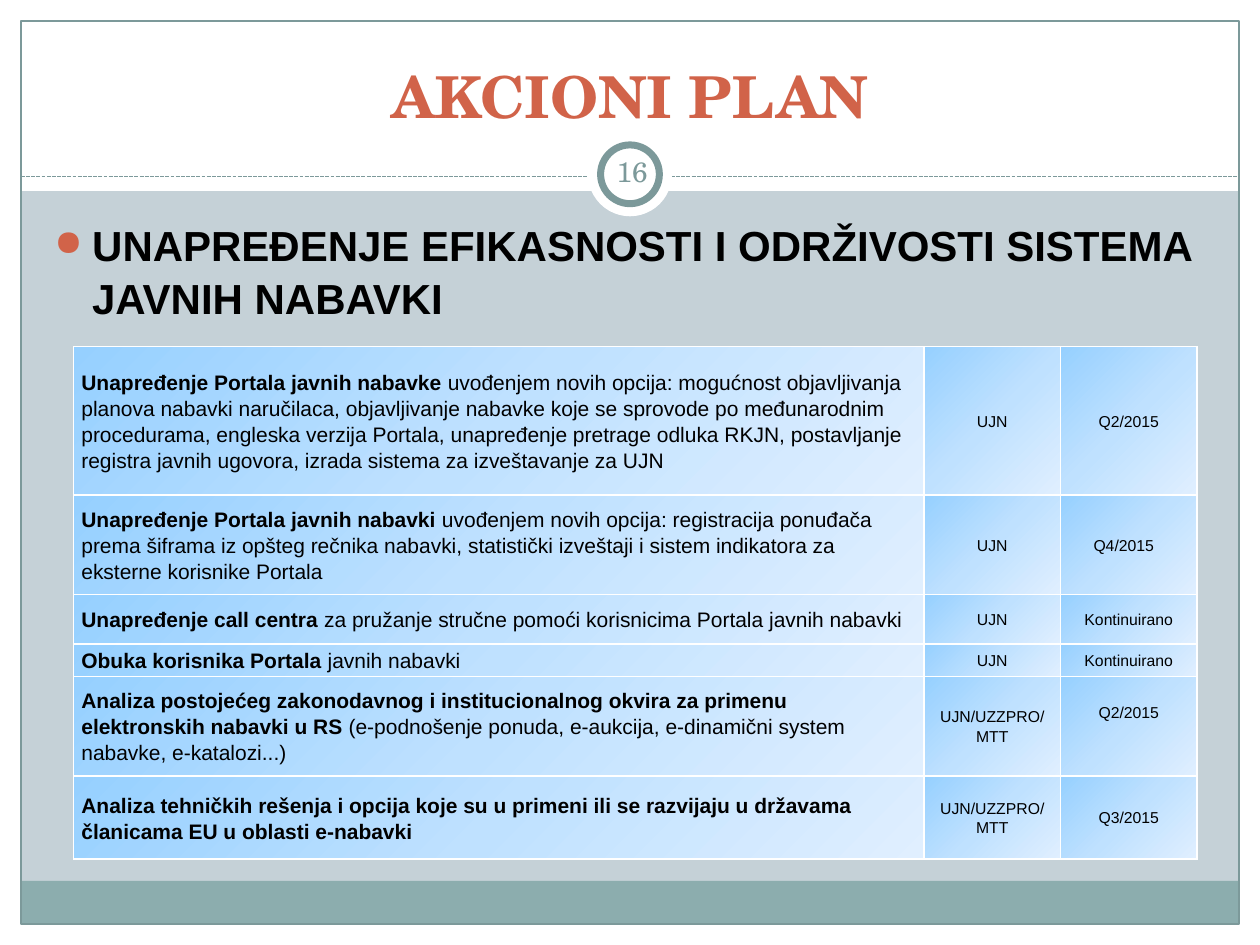
"""Build the action plan slide with its table of public procurement measures."""
import dataclasses
import typing

import pptx
import pptx.dml.color
import pptx.enum.dml
import pptx.enum.shapes
import pptx.enum.text
import pptx.oxml
import pptx.oxml.ns
import pptx.util

COLS, ROWS = 120, 90
WIDTH, HEIGHT = pptx.util.Inches(10), pptx.util.Inches(7.5)
SERIF, SANS = "TeX Gyre Schola", "Arial"
COLORS = {
    "background": "C5D1D7", "white": "FFFFFF", "band": "8CADAE", "frame": "7C999A",
    "accent": "D16349", "text": "000000",
    "cell_start": "96D0FF", "cell_middle": "BFE1FF", "cell_end": "E0EFFF",
}
SHAPE = pptx.enum.shapes.MSO_SHAPE
ANCHOR = pptx.enum.text.MSO_ANCHOR
ALIGN = pptx.enum.text.PP_ALIGN
NS = pptx.oxml.ns.nsdecls("a")


@dataclasses.dataclass(frozen=True)
class Panel:
    col: float
    row: float
    cols: float
    rows: float
    fill: str | None = None
    line: str | None = None
    weight: float = 0.75
    kind: typing.Any = SHAPE.RECTANGLE


@dataclasses.dataclass(frozen=True)
class Run:
    text: str
    size: float
    font: str = SANS
    color: str = "text"
    bold: bool = False


@dataclasses.dataclass(frozen=True)
class Measure:
    rows: float
    lead: str
    detail: str
    owner: str
    due: str
    due_right: float = 0.75
    due_bottom: float = 0


PANELS = [
    Panel(0, 88, COLS, 2, "white"),
    Panel(0, 0, COLS, 18.2, "white"),
    Panel(0, 0, 2, ROWS, "white"),
    Panel(118, 0, 2, ROWS, "white"),
    Panel(2, 83.9, 116, 4.1, "band"),
    Panel(2, 2, 116, 86, line="frame"),
]
BADGE = [
    Panel(56, 12.6, 8, 8, "white", kind=SHAPE.OVAL),
    Panel(57.2, 13.8, 5.6, 5.6, "white", "frame", 4, SHAPE.OVAL),
]
TABLE_COLS = (81, 13, 13)
MEASURES = [
    Measure(14.16, "Unapređenje Portala javnih nabavke ",
            "uvođenjem novih opcija: mogućnost objavljivanja planova nabavki naručilaca, "
            "objavljivanje nabavke koje se sprovode po međunarodnim procedurama, engleska "
            "verzija Portala, unapređenje pretrage odluka RKJN, postavljanje registra javnih "
            "ugovora, izrada sistema za izveštavanje za UJN", "UJN", "Q2/2015"),
    Measure(9.48, "Unapređenje Portala javnih nabavki ",
            "uvođenjem novih opcija: registracija ponuđača prema šiframa iz opšteg rečnika "
            "nabavki, statistički izveštaji i sistem indikatora za eksterne korisnike Portala",
            "UJN", "Q4/2015", due_right=1.7),
    Measure(4.68, "Unapređenje call centra ",
            "za pružanje stručne pomoći korisnicima Portala javnih nabavki",
            "UJN", "Kontinuirano"),
    Measure(3.12, "Obuka korisnika Portala ", "javnih nabavki", "UJN", "Kontinuirano"),
    Measure(9.48, "Analiza postojećeg zakonodavnog i institucionalnog okvira za primenu "
            "elektronskih nabavki u RS ",
            "(e-podnošenje ponuda, e-aukcija, e-dinamični system nabavke, e-katalozi...)",
            "UJN/UZZPRO/MTT", "Q2/2015", due_bottom=2.6),
    Measure(7.92, "Analiza tehničkih rešenja i opcija koje su u primeni ili se razvijaju u "
            "državama članicama EU u oblasti e-nabavki", "", "UJN/UZZPRO/MTT", "Q3/2015"),
]


def x(cols: float) -> int:
    return round(WIDTH * cols / COLS)


def y(rows: float) -> int:
    return round(HEIGHT * rows / ROWS)


def rgb(name: str) -> pptx.dml.color.RGBColor:
    return pptx.dml.color.RGBColor.from_string(COLORS[name])


def draw_panel(s: typing.Any, panel: Panel) -> None:
    sp = s.shapes.add_shape(panel.kind, x(panel.col), y(panel.row), x(panel.cols), y(panel.rows))
    sp.shadow.inherit = False
    if panel.fill:
        sp.fill.solid()
        sp.fill.fore_color.rgb = rgb(panel.fill)
    else:
        sp.fill.background()
    if panel.line:
        sp.line.color.rgb = rgb(panel.line)
        sp.line.width = pptx.util.Pt(panel.weight)
    else:
        sp.line.fill.background()


def draw_divider(s: typing.Any) -> None:
    sp = s.shapes.add_connector(
        pptx.enum.shapes.MSO_CONNECTOR.STRAIGHT, x(2), y(16.8), x(118), y(16.8))
    sp.line.color.rgb = rgb("frame")
    sp.line.width = pptx.util.Pt(0.75)
    sp.line.dash_style = pptx.enum.dml.MSO_LINE.SQUARE_DOT
    sp._element.spPr.append(pptx.oxml.parse_xml(f"<a:effectLst {NS}/>"))


def add_runs(p: typing.Any, runs: typing.Iterable[Run]) -> None:
    for run in runs:
        r = p.add_run()
        r.text = run.text
        r.font.size = pptx.util.Pt(run.size)
        r.font.name = run.font
        r.font.bold = run.bold
        r.font.color.rgb = rgb(run.color)


def draw_text(s: typing.Any, area: Panel, run: Run, align: typing.Any, anchor: typing.Any,
              inset: float = 0.6) -> typing.Any:
    tf = s.shapes.add_textbox(x(area.col), y(area.row), x(area.cols), y(area.rows)).text_frame
    tf.word_wrap = True
    tf.vertical_anchor = anchor
    tf.margin_left = tf.margin_right = x(inset)
    tf.margin_top = tf.margin_bottom = y(0.6)
    p = tf.paragraphs[0]
    p.alignment = align
    add_runs(p, [run])
    return p


def add_bullet(p: typing.Any) -> None:
    pPr = p._p.get_or_add_pPr()
    pPr.set("marL", str(x(3.6)))
    pPr.set("indent", str(-x(3.6)))
    for tag in (f'<a:buClr {NS}><a:srgbClr val="{COLORS["accent"]}"/></a:buClr>',
                f'<a:buSzPct {NS} val="85000"/>', f'<a:buChar {NS} char="●"/>'):
        pPr.append(pptx.oxml.parse_xml(tag))


def style_cell(cell: typing.Any) -> None:
    tcPr = cell._tc.get_or_add_tcPr()
    for side in ("lnL", "lnR", "lnT", "lnB"):
        tcPr.append(pptx.oxml.parse_xml(
            f'<a:{side} {NS} w="12700"><a:solidFill><a:srgbClr val="{COLORS["white"]}"/>'
            f'</a:solidFill></a:{side}>'))
    stops = "".join(
        f'<a:gs pos="{i * 50000}"><a:srgbClr val="{COLORS[name]}"/></a:gs>'
        for i, name in enumerate(("cell_start", "cell_middle", "cell_end")))
    tcPr.append(pptx.oxml.parse_xml(
        f'<a:gradFill {NS} rotWithShape="1"><a:gsLst>{stops}</a:gsLst>'
        '<a:lin ang="2700000" scaled="0"/></a:gradFill>'))


def fill_cell(cell: typing.Any, runs: list[Run], align: typing.Any, right: float = 0.75,
              bottom: float = 0) -> None:
    cell.vertical_anchor = ANCHOR.MIDDLE
    cell.margin_left, cell.margin_right = x(0.75), x(right)
    cell.margin_top, cell.margin_bottom = 0, y(bottom)
    p = cell.text_frame.paragraphs[0]
    p.alignment = align
    p.line_spacing = 1.1
    p.space_before = p.space_after = pptx.util.Pt(2.9)
    add_runs(p, runs)
    style_cell(cell)


def draw_measures(s: typing.Any) -> None:
    height = sum(m.rows for m in MEASURES)
    table = s.shapes.add_table(len(MEASURES), len(TABLE_COLS), x(7), y(33),
                               x(sum(TABLE_COLS)), y(height)).table
    table.first_row = table.horz_banding = False
    for column, cols in zip(table.columns, TABLE_COLS):
        column.width = x(cols)
    for row, m in zip(table.rows, MEASURES):
        row.height = y(m.rows)
        task, owner, due = row.cells
        runs = [Run(m.lead, 12, bold=True)] + ([Run(m.detail, 12)] if m.detail else [])
        fill_cell(task, runs, ALIGN.LEFT)
        fill_cell(owner, [Run(m.owner, 9)], ALIGN.CENTER)
        fill_cell(due, [Run(m.due, 9)], ALIGN.CENTER, m.due_right, m.due_bottom)


def main() -> None:
    prs = pptx.Presentation()
    prs.slide_width, prs.slide_height = WIDTH, HEIGHT
    s = prs.slides.add_slide(prs.slide_layouts[6])
    s.background.fill.solid()
    s.background.fill.fore_color.rgb = rgb("background")
    for panel in PANELS:
        draw_panel(s, panel)
    draw_divider(s)
    for panel in BADGE:
        draw_panel(s, panel)
    draw_text(s, Panel(4, 3, 112, 10), Run("AKCIONI PLAN", 33, SERIF, "accent", True),
              ALIGN.CENTER, ANCHOR.BOTTOM)
    draw_text(s, Panel(57.2, 13.4, 6, 5.8), Run("16", 16, SERIF, "frame"),
              ALIGN.CENTER, ANCHOR.MIDDLE)
    p = draw_text(s, Panel(4, 20.1, 111.6, 12), Run(
        "UNAPREĐENJE EFIKASNOSTI I ODRŽIVOSTI SISTEMA JAVNIH NABAVKI", 24, bold=True),
        ALIGN.LEFT, ANCHOR.TOP, 1.2)
    p.line_spacing = 1.05
    add_bullet(p)
    draw_measures(s)
    prs.save("out.pptx")


if __name__ == "__main__":
    main()
